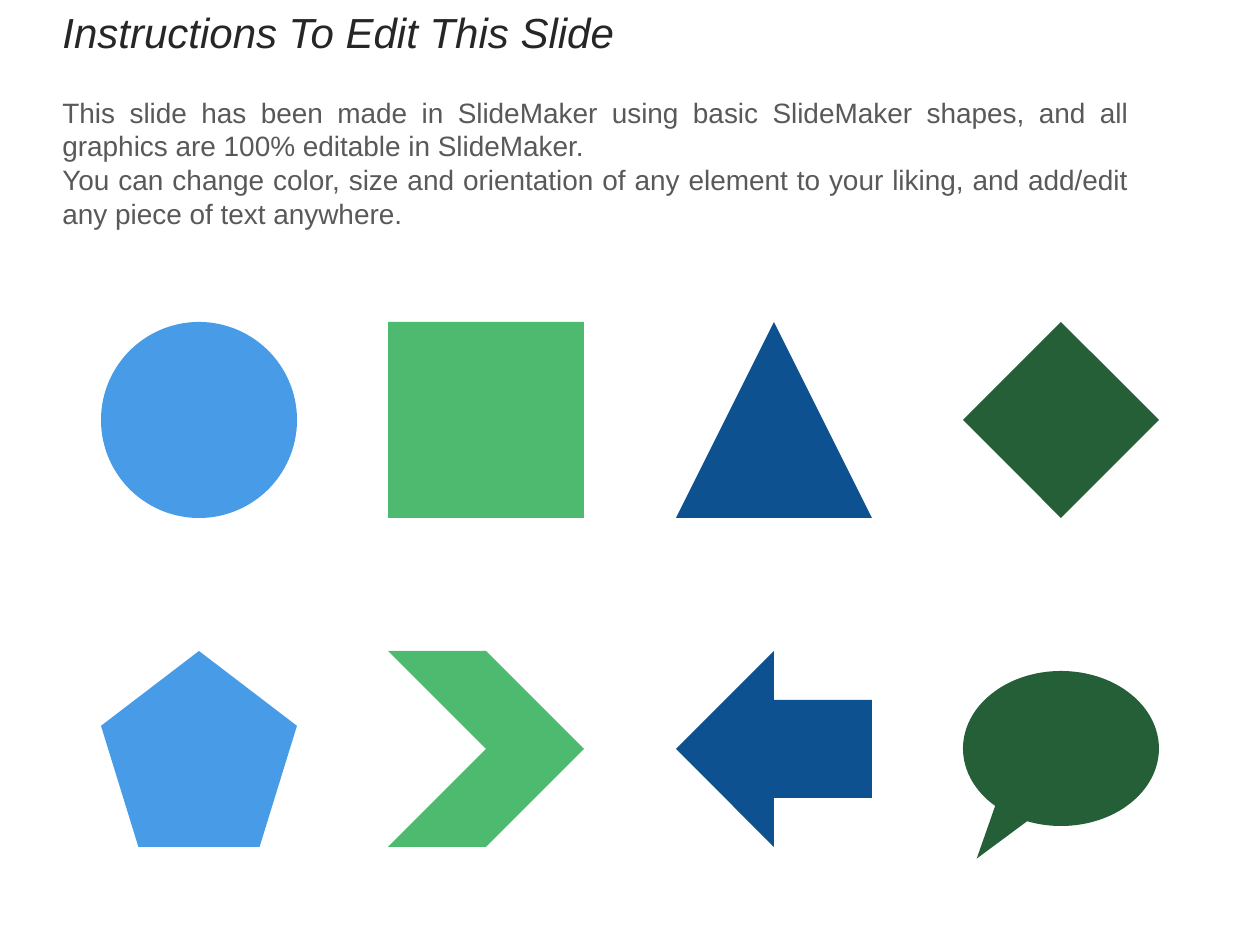
from pptx import Presentation
from pptx import util as u
from pptx.dml.color import RGBColor
from pptx.enum import shapes, text

EMU_PER_PX = 914400 / 126
SLIDE_W, SLIDE_H = 1260, 945

TITLE_COLOR = RGBColor(0x26, 0x26, 0x26)
BODY_COLOR = RGBColor(0x59, 0x59, 0x59)
COLUMN_COLORS = (
    RGBColor(0x47, 0x9B, 0xE7),
    RGBColor(0x4E, 0xBA, 0x6F),
    RGBColor(0x0D, 0x51, 0x90),
    RGBColor(0x25, 0x5F, 0x37),
)

SHAPE_SIZE = 196
CALLOUT_H = 155
FIRST_LEFT, LAST_LEFT = 101, 963
ROW_TOPS = (322, 651)
KINDS = shapes.MSO_SHAPE
SHAPE_ROWS = (
    (KINDS.OVAL, KINDS.RECTANGLE, KINDS.ISOSCELES_TRIANGLE, KINDS.DIAMOND),
    (KINDS.REGULAR_PENTAGON, KINDS.CHEVRON, KINDS.LEFT_ARROW, KINDS.OVAL_CALLOUT),
)
CALLOUT_TAIL = (-0.43, 0.71)

TITLE = "Instructions To Edit This Slide"
BODY = (
    "This slide has been made in SlideMaker using basic SlideMaker shapes, "
    "and all graphics are 100% editable in SlideMaker.",
    "You can change color, size and orientation of any element to your liking, "
    "and add/edit any piece of text anywhere.",
)
TITLE_FONT = {"name": "Arial", "size": u.Pt(24), "italic": True}
BODY_FONT = {"name": "Arial", "size": u.Pt(16), "italic": False}
TITLE_LAYOUT = {"line_spacing": u.Pt(29), "space_after": u.Pt(21.75)}
BODY_LAYOUT = {"line_spacing": u.Pt(19.25), "alignment": text.PP_ALIGN.JUSTIFY}


def px(length):
    return u.Emu(round(length * EMU_PER_PX))


def set_values(target, values):
    for name, value in values.items():
        setattr(target, name, value)


def write_paragraph(paragraph, wording, font, color, layout):
    set_values(paragraph, layout)
    run = paragraph.add_run()
    run.text = wording
    set_values(run.font, font)
    run.font.color.rgb = color


def add_instructions(slide):
    box = slide.shapes.add_textbox(px(50), px(0), px(1091), px(237))
    frame = box.text_frame
    frame.word_wrap = True
    frame.auto_size = text.MSO_AUTO_SIZE.SHAPE_TO_FIT_TEXT
    write_paragraph(frame.paragraphs[0], TITLE, TITLE_FONT, TITLE_COLOR, TITLE_LAYOUT)
    for sentence in BODY:
        write_paragraph(frame.add_paragraph(), sentence, BODY_FONT, BODY_COLOR, BODY_LAYOUT)


def add_sample(slide, kind, left, top, height, color):
    sample = slide.shapes.add_shape(kind, px(left), px(top), px(SHAPE_SIZE), px(height))
    sample.shadow.inherit = False
    sample.fill.solid()
    sample.fill.fore_color.rgb = color
    sample.line.fill.background()
    return sample


def add_sample_grid(slide):
    """Lay the samples out in equal columns; the callout is flatter and centred in its row."""
    step = (LAST_LEFT - FIRST_LEFT) / (len(COLUMN_COLORS) - 1)
    for row_top, kinds in zip(ROW_TOPS, SHAPE_ROWS):
        for column, (kind, color) in enumerate(zip(kinds, COLUMN_COLORS)):
            is_callout = kind == KINDS.OVAL_CALLOUT
            height = CALLOUT_H if is_callout else SHAPE_SIZE
            top = row_top + (SHAPE_SIZE - height) // 2
            left = round(FIRST_LEFT + column * step)
            sample = add_sample(slide, kind, left, top, height, color)
            if is_callout:
                for index, offset in enumerate(CALLOUT_TAIL):
                    sample.adjustments[index] = offset


def main():
    deck = Presentation()
    deck.slide_width, deck.slide_height = px(SLIDE_W), px(SLIDE_H)
    slide = deck.slides.add_slide(deck.slide_layouts[6])
    add_instructions(slide)
    add_sample_grid(slide)
    deck.save("out.pptx")


if __name__ == "__main__":
    main()
